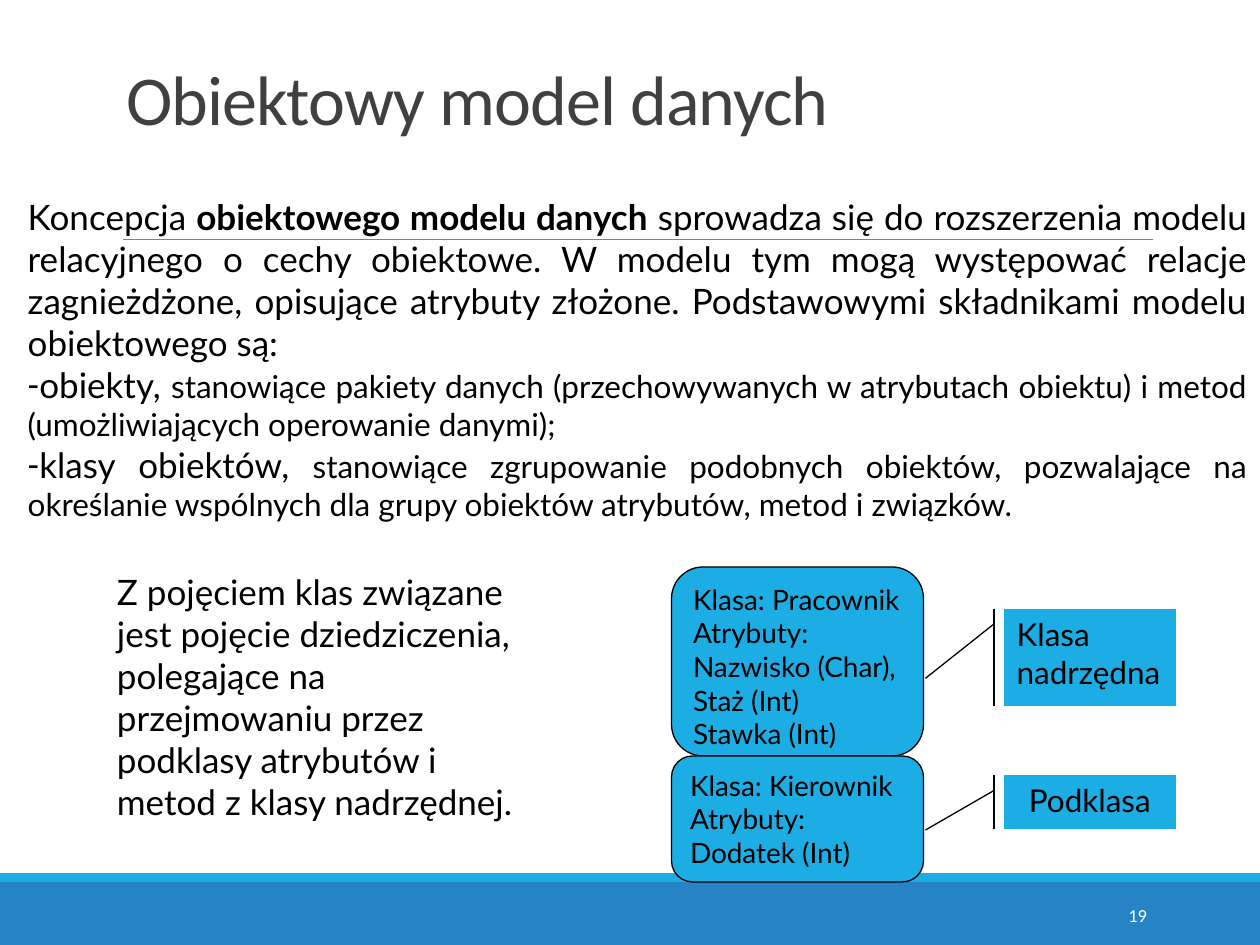
from dataclasses import dataclass

import pptx
import pptx.util
import pptx.dml.color
import pptx.enum.shapes
import pptx.enum.text
from lxml import etree
from pptx.oxml.ns import qn

RGB = pptx.dml.color.RGBColor.from_string
SHAPE = pptx.enum.shapes.MSO_SHAPE
ALIGN = pptx.enum.text.PP_ALIGN
ANCHOR = pptx.enum.text.MSO_ANCHOR
FIT = pptx.enum.text.MSO_AUTO_SIZE
Inches, Pt = pptx.util.Inches, pptx.util.Pt


@dataclass(frozen=True)
class Theme:
    heading_font: str = "Calibri"
    text_font: str = "Lato"
    heading: str = "404040"
    ink: str = "000000"
    rule: str = "808080"
    band: str = "2683C6"
    accent: str = "1CADE4"
    paper: str = "FFFFFF"
    title_size: float = 40
    lead_size: float = 20
    detail_size: float = 18
    class_size: float = 16
    number_size: float = 10.5


THEME = Theme()
WIDTH, HEIGHT = 10, 7.5
BAND_TOP, STRIPE = 7, 0.07
CLASS_LEFT, CLASS_TOP, CLASS_WIDTH = 5.33, 4.5, 2
LABEL_LEFT, LABEL_WIDTH = 7.97, 1.36

TITLE = "Obiektowy model danych"
# Each run: text, size, bold
CONCEPT = [
    ("Koncepcja ", THEME.lead_size, False),
    ("obiektowego modelu danych", THEME.lead_size, True),
    (" sprowadza się do rozszerzenia modelu relacyjnego o cechy obiektowe. "
     "W modelu tym mogą występować relacje zagnieżdżone, opisujące atrybuty złożone. "
     "Podstawowymi składnikami modelu obiektowego są:", THEME.lead_size, False),
]
COMPONENTS = [
    ("obiekty, ", "stanowiące pakiety danych (przechowywanych w atrybutach obiektu) "
     "i metod (umożliwiających operowanie danymi);"),
    ("klasy obiektów, ", "stanowiące zgrupowanie podobnych obiektów, pozwalające na "
     "określanie wspólnych dla grupy obiektów atrybutów, metod i związków."),
]
INHERITANCE = ("Z pojęciem klas związane jest pojęcie dziedziczenia, polegające na "
               "przejmowaniu przez podklasy atrybutów i metod z klasy nadrzędnej.")
# Height and lines of each class, stacked from the top
CLASSES = [
    (1.5, ["Klasa: Pracownik", "Atrybuty:", "Nazwisko (Char),", "Staż (Int)", "Stawka (Int)"]),
    (1, ["Klasa: Kierownik", "Atrybuty:", "Dodatek (Int)"]),
]
# Top, height, lines, alignment and pointer adjustments of each label
LABELS = [
    (4.83, 0.77, ["Klasa", "nadrzędna"], ALIGN.LEFT, (0.16, -0.06, 0.72, -0.46)),
    (6.15, 0.43, ["Podklasa"], ALIGN.CENTER, (0.29, -0.06, 1.02, -0.46)),
]
PAGE = "19"


def place(part, left, top, width, height):
    part.left, part.top = Inches(left), Inches(top)
    part.width, part.height = Inches(width), Inches(height)


def style(font, size, color=THEME.ink, name=THEME.text_font):
    font.size, font.name = Pt(size), name
    font.color.rgb = RGB(color)


def write(frame, lines, size, align=ALIGN.LEFT, color=THEME.ink, name=THEME.text_font):
    frame.text = "\n".join(lines)
    for paragraph in frame.paragraphs:
        paragraph.alignment = align
        style(paragraph.font, size, color, name)


def add_filled(slide, kind, box, fill, outline=None):
    shape = slide.shapes.add_shape(kind, *map(Inches, box))
    shape.shadow.inherit = False
    shape.fill.solid()
    shape.fill.fore_color.rgb = RGB(fill)
    if outline:
        shape.line.color.rgb = RGB(outline)
        shape.line.width = Pt(0.75)
    else:
        shape.line.fill.background()
    return shape


def add_backdrop(slide):
    """Footer bands and title rule, moved behind the placeholders."""
    band = add_filled(slide, SHAPE.RECTANGLE, (0, BAND_TOP, WIDTH, HEIGHT - BAND_TOP), THEME.band)
    stripe = add_filled(slide, SHAPE.RECTANGLE, (0, BAND_TOP - STRIPE, WIDTH, STRIPE), THEME.accent)
    rule = slide.shapes.add_connector(
        pptx.enum.shapes.MSO_CONNECTOR.STRAIGHT, *map(Inches, (0.98, 1.9, 9.15, 1.9)))
    rule.line.color.rgb = RGB(THEME.rule)
    rule.line.width = Pt(0.5)
    etree.SubElement(rule._element.spPr, qn("a:effectLst"))
    for depth, part in enumerate((band, stripe, rule), start=2):
        slide.shapes._spTree.insert(depth, part._element)


def fill_title(title):
    place(title, 0.9, 0.31, 8.25, 0.85)
    frame = title.text_frame
    write(frame, [TITLE], THEME.title_size, color=THEME.heading, name=THEME.heading_font)
    frame.auto_size, frame.vertical_anchor = FIT.NONE, ANCHOR.BOTTOM
    paragraph = frame.paragraphs[0]
    paragraph.line_spacing = 0.85
    paragraph.runs[0]._r.get_or_add_rPr().set("spc", "-50")


def fill_body(body):
    place(body, 0.12, 1.5, 9.88, 2.73)
    frame = body.text_frame
    frame.auto_size = FIT.SHAPE_TO_FIT_TEXT
    items = [("", CONCEPT)] + [
        ("-", [(term, THEME.lead_size, False), (meaning, THEME.detail_size, False)])
        for term, meaning in COMPONENTS]
    for index, (bullet, runs) in enumerate(items):
        paragraph = frame.add_paragraph() if index else frame.paragraphs[0]
        paragraph.alignment = ALIGN.JUSTIFY
        paragraph.space_before = Pt(0)
        properties = paragraph._p.get_or_add_pPr()
        properties.set("marL", "0")
        properties.set("indent", "0")
        if bullet:
            etree.SubElement(properties, qn("a:buChar")).set("char", bullet)
        else:
            etree.SubElement(properties, qn("a:buNone"))
        for text, size, bold in runs:
            run = paragraph.add_run()
            run.text = text
            style(run.font, size)
            run.font.bold = bold


def add_classes(slide):
    top = CLASS_TOP
    for height, lines in CLASSES:
        box = add_filled(slide, SHAPE.FLOWCHART_ALTERNATE_PROCESS,
                         (CLASS_LEFT, top, CLASS_WIDTH, height), THEME.accent, THEME.ink)
        write(box.text_frame, lines, THEME.class_size)
        box.text_frame.word_wrap = False
        box.text_frame.vertical_anchor = ANCHOR.TOP
        top += height


def add_labels(slide):
    for top, height, lines, align, pointer in LABELS:
        label = add_filled(slide, SHAPE.LINE_CALLOUT_1_ACCENT_BAR,
                           (LABEL_LEFT, top, LABEL_WIDTH, height), THEME.accent, THEME.ink)
        for index, share in enumerate(pointer):
            label.adjustments[index] = share
        write(label.text_frame, lines, THEME.detail_size, align)
        label.text_frame.vertical_anchor = ANCHOR.TOP


def add_note(slide, box, text, size, **look):
    frame = slide.shapes.add_textbox(*map(Inches, box)).text_frame
    frame.word_wrap = True
    write(frame, [text], size, **look)
    return frame


def main():
    deck = pptx.Presentation()
    deck.slide_width, deck.slide_height = Inches(WIDTH), Inches(HEIGHT)
    slide = deck.slides.add_slide(deck.slide_layouts[1])
    add_backdrop(slide)
    fill_title(slide.shapes.title)
    fill_body(slide.placeholders[1])
    add_note(slide, (0.83, 4.48, 3.4, 2.46), INHERITANCE, THEME.lead_size)
    add_classes(slide)
    add_labels(slide)
    number = add_note(slide, (8.12, 7.06, 1.08, 0.4), PAGE, THEME.number_size,
                      align=ALIGN.RIGHT, color=THEME.paper, name=THEME.heading_font)
    number.vertical_anchor = ANCHOR.MIDDLE
    deck.save("out.pptx")


if __name__ == "__main__":
    main()
